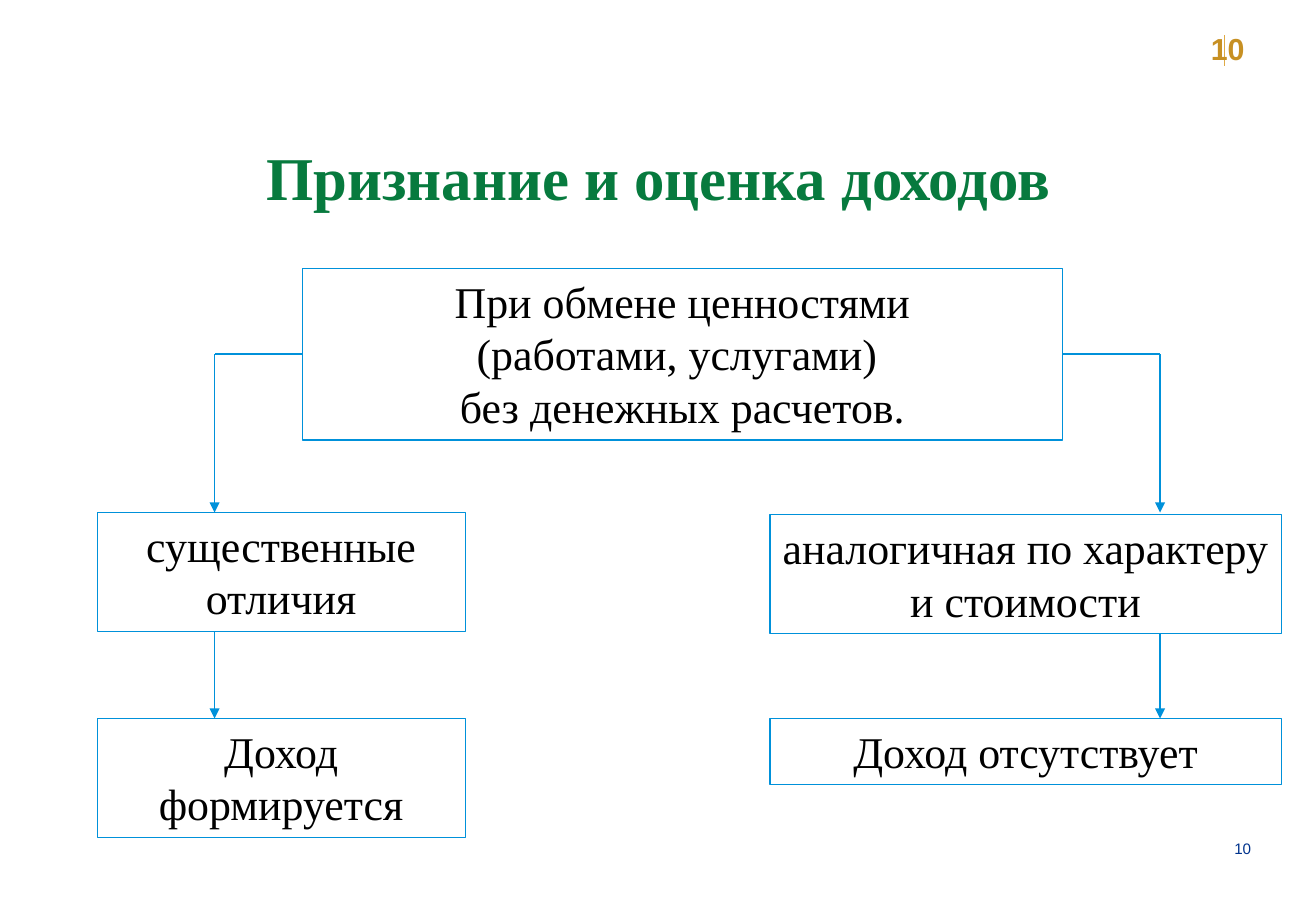
from lxml import etree
from pptx import Presentation
from pptx.dml.color import RGBColor
from pptx.enum import shapes, text
from pptx.oxml import ns
from pptx.util import Pt

BLUE = RGBColor(0x00, 0x91, 0xDA)
NAVY = RGBColor(0x00, 0x33, 0x8D)
GREEN = RGBColor(0x07, 0x7A, 0x3E)
GOLD = RGBColor(0xC7, 0x90, 0x23)
PALE_GOLD = RGBColor(0xDE, 0xAA, 0x46)
BLACK = RGBColor(0, 0, 0)
CENTER, RIGHT, LEFT = text.PP_ALIGN.CENTER, text.PP_ALIGN.RIGHT, text.PP_ALIGN.LEFT


def write(shape, lines, size, color, font="Times New Roman", bold=False, align=CENTER):
    frame = shape.text_frame
    frame.word_wrap = True
    frame.text = "\n".join(lines)
    for para in frame.paragraphs:
        para.alignment = align
        para.font.name = font
        para.font.size = Pt(size)
        para.font.bold = bold
        para.font.color.rgb = color


def draw_line(page, start, end, color=BLUE, arrow=False):
    line = page.shapes.add_connector(
        shapes.MSO_CONNECTOR.STRAIGHT, *[Pt(value) for value in start + end])
    line.line.color.rgb = color
    line.line.width = Pt(1)
    if arrow:
        etree.SubElement(line.line._get_or_add_ln(), ns.qn("a:tailEnd"), type="triangle")
    etree.SubElement(line._element.spPr, ns.qn("a:effectLst"))
    return line


deck = Presentation()
deck.slide_width, deck.slide_height = Pt(780), Pt(540)
page = deck.slides.add_slide(deck.slide_layouts[5])

# Title
title = page.shapes.title
title.left, title.top, title.width, title.height = Pt(41.4), Pt(79.2), Pt(697.7), Pt(50.4)
title.text_frame.vertical_anchor = text.MSO_ANCHOR.TOP
write(title, ["Признание и оценка доходов"], 36, GREEN, bold=True)

# Page numbers, top and bottom
draw_line(page, (725.8, 20.9), (725.8, 38.9), PALE_GOLD)
top_number = page.shapes.add_textbox(Pt(710.6), Pt(14.4), Pt(49.7), Pt(28.8))
write(top_number, ["10"], 18, GOLD, "Arial", True, LEFT)
bottom_number = page.shapes.add_textbox(Pt(710.6), Pt(497.5), Pt(31), Pt(11.5))
frame = bottom_number.text_frame
frame.margin_left = frame.margin_top = frame.margin_right = frame.margin_bottom = 0
write(bottom_number, ["10"], 9, NAVY, "Arial", align=RIGHT)

# Boxes: left, top, width, height, lines
boxes = [
    (179.3, 159.1, 450.7, 101.8,
     ["При обмене ценностями", "(работами, услугами) ", "без денежных расчетов."]),
    (57.6, 303.8, 218.2, 70.6, ["существенные отличия"]),
    (456.4, 305.1, 303.2, 70.6, ["аналогичная по характеру и стоимости"]),
    (57.6, 425.9, 218.2, 70.6, ["Доход формируется"]),
    (456.4, 425.9, 303.2, 39, ["Доход отсутствует"]),
]
drawn = []
for left, top, width, height, lines in boxes:
    box = page.shapes.add_shape(
        shapes.MSO_SHAPE.RECTANGLE, Pt(left), Pt(top), Pt(width), Pt(height))
    box.shadow.inherit = False
    box.fill.background()
    box.line.color.rgb = BLUE
    box.line.width = Pt(0.75)
    box.text_frame.vertical_anchor = text.MSO_ANCHOR.TOP
    write(box, lines, 26, BLACK)
    drawn.append(box)
exchange = drawn[0]

# Branches: side of the exchange box, its x, x of the arrows, bottom of the condition box
MIDDLE = 210
for side, edge, x, bottom in ((1, 179.3, 127.2, 374.4), (3, 630, 687.6, 375.7)):
    branch = draw_line(page, (edge, MIDDLE), (x, MIDDLE))
    branch.begin_connect(exchange, side)
    draw_line(page, (x, MIDDLE), (x, 303.8), arrow=True)
    draw_line(page, (x, bottom), (x, 425.9), arrow=True)

deck.save("out.pptx")
